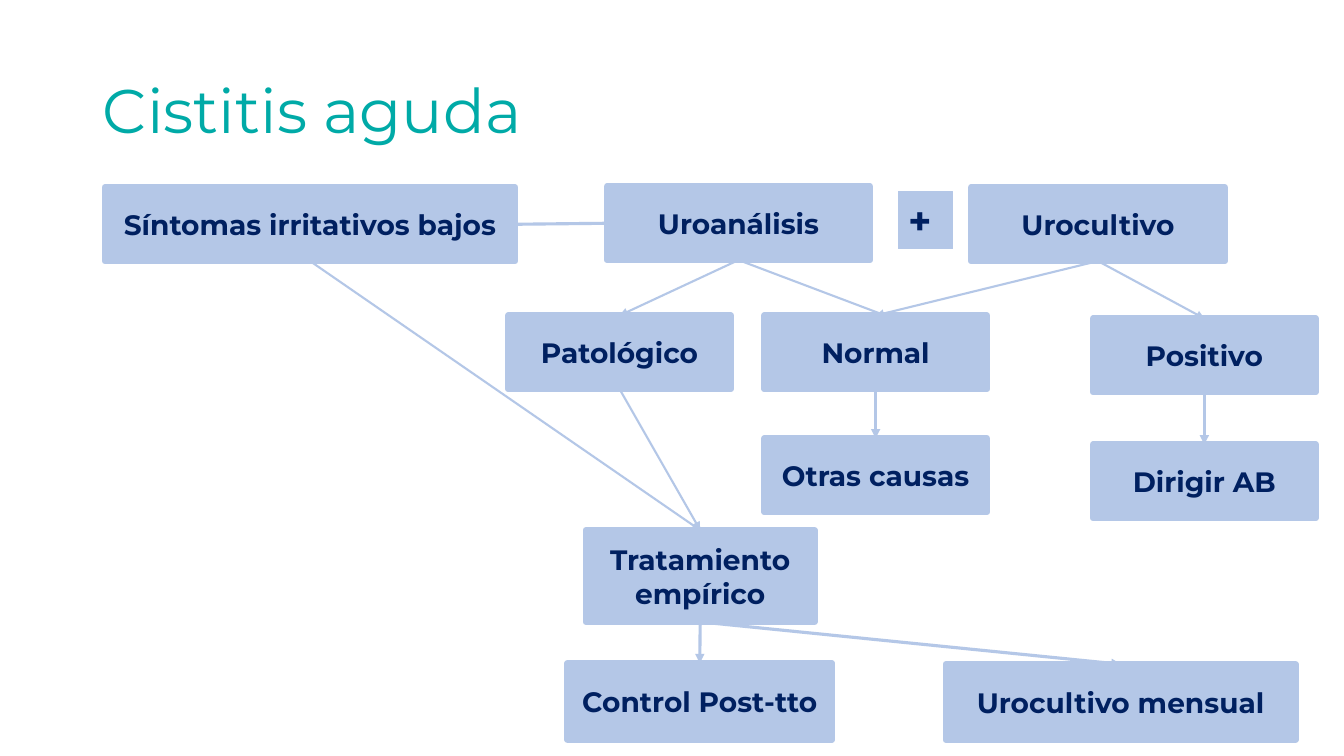
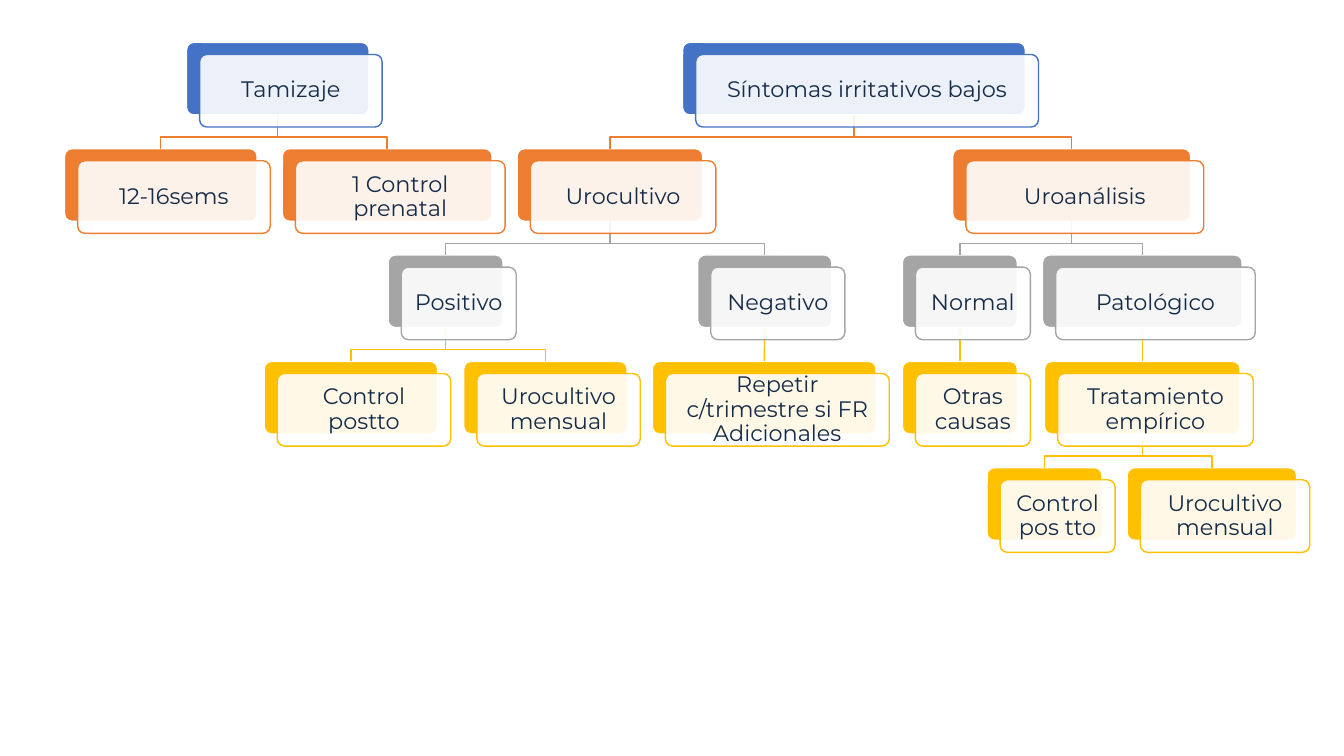
from lxml import etree
from pptx import Presentation
from pptx.dml.color import RGBColor
from pptx.enum.shapes import MSO_CONNECTOR, MSO_SHAPE
from pptx.enum.text import MSO_ANCHOR, MSO_AUTO_SIZE, PP_ALIGN
from pptx.oxml.ns import qn
from pptx.util import Inches, Pt

FONT = "Montserrat"
TEAL, NAVY, INK, WHITE = "00AAA7", "002060", "152B48", "FFFFFF"
PALE_BLUE = "B4C7E7"
LEVEL_COLORS = ["4472C4", "ED7D31", "A5A5A5", "FFC000", "FFC000"]
TOP, LEFT, BOTTOM, RIGHT = range(4)

# Flowchart: name, left, top, width, height
BOXES = [
    ("Síntomas irritativos bajos", 0, 0.01, 4.07, 0.73),
    ("Uroanálisis", 4.98, 0, 2.61, 0.73),
    ("Urocultivo", 8.59, 0.01, 2.52, 0.73),
    ("Patológico", 4, 1.28, 2.21, 0.73),
    ("Normal", 6.54, 1.28, 2.21, 0.73),
    ("Positivo", 9.8, 1.31, 2.21, 0.73),
    ("Otras causas", 6.54, 2.5, 2.21, 0.73),
    ("Dirigir AB", 9.8, 2.56, 2.21, 0.73),
    ("Tratamiento empírico", 4.77, 3.41, 2.27, 0.91),
    ("Control Post-tto", 4.59, 4.73, 2.62, 0.76),
    ("Urocultivo mensual", 8.34, 4.74, 3.47, 0.75),
]
# Arrows run from the bottom of one box to the top of another
ARROWS = [
    ("Uroanálisis", "Patológico", 1.5),
    ("Urocultivo", "Normal", 1.5),
    ("Urocultivo", "Positivo", 1.5),
    ("Síntomas irritativos bajos", "Tratamiento empírico", 1.5),
    ("Patológico", "Tratamiento empírico", 1.5),
    ("Normal", "Otras causas", 2.25),
    ("Positivo", "Dirigir AB", 2.25),
    ("Tratamiento empírico", "Control Post-tto", 2.25),
    ("Tratamiento empírico", "Urocultivo mensual", 2.25),
]

# Trees: text, left, width, children
TREES = [
    ("Tamizaje", 1.21, 1.81, [
        ("12-16sems", 0, 1.91, []),
        ("1 Control prenatal", 2.16, 2.08, []),
    ]),
    ("Síntomas irritativos bajos", 6.13, 3.4, [
        ("Urocultivo", 4.49, 1.84, [
            ("Positivo", 3.21, 1.14, [
                ("Control postto", 1.98, 1.72, []),
                ("Urocultivo mensual", 3.96, 1.62, []),
            ]),
            ("Negativo", 6.28, 1.33, [
                ("Repetir c/trimestre si FR Adicionales", 5.83, 2.22, []),
            ]),
        ]),
        ("Uroanálisis", 8.81, 2.36, [
            ("Normal", 8.31, 1.14, [("Otras causas", 8.31, 1.14, [])]),
            ("Patológico", 9.7, 1.98, [
                ("Tratamiento empírico", 9.72, 1.94, [
                    ("Control pos tto", 9.15, 1.14, []),
                    ("Urocultivo mensual", 10.54, 1.68, []),
                ]),
            ]),
        ]),
    ]),
]
CARD_HEIGHT, LEVEL_STEP, CARD_SHIFT = 0.72, 1.055, (0.13, 0.12)


def color(value):
    return RGBColor.from_string(value)


def write(shape, text, size, text_color, bold=False, align=PP_ALIGN.CENTER,
          anchor=MSO_ANCHOR.MIDDLE, spacing=None):
    frame = shape.text_frame
    frame.text = text
    frame.word_wrap = True
    frame.auto_size = MSO_AUTO_SIZE.NONE
    frame.vertical_anchor = anchor
    paragraph = frame.paragraphs[0]
    paragraph.alignment = align
    if spacing:
        paragraph.line_spacing = spacing
    font = paragraph.runs[0].font
    font.name, font.size, font.bold = FONT, Pt(size), bold
    font.color.rgb = color(text_color)


def add_panel(slide, kind, box, fill, line, line_width):
    shape = slide.shapes.add_shape(kind, *(Inches(value) for value in box))
    shape.shadow.inherit = False
    shape.fill.solid()
    shape.fill.fore_color.rgb = color(fill)
    shape.line.color.rgb = color(line)
    shape.line.width = Pt(line_width)
    return shape


def add_line(slide, start, end, line_color, width, arrow=False):
    """Join two (shape, site) ends; an end may also be a pair of lengths."""
    free_end = end if not hasattr(end[0], "shape_id") else (0, 0)
    line = slide.shapes.add_connector(MSO_CONNECTOR.STRAIGHT, 0, 0, *free_end)
    line.begin_connect(*start)
    if end is not free_end:
        line.end_connect(*end)
    line.line.color.rgb = color(line_color)
    line.line.width = Pt(width)
    if arrow:
        tail = etree.SubElement(line.line._get_or_add_ln(), qn("a:tailEnd"))
        tail.set("type", "triangle")
    etree.SubElement(line._element.spPr, qn("a:effectLst"))


def add_title(slide, text, left, top, width, height):
    title = slide.shapes.title
    title.left, title.top = Inches(left), Inches(top)
    title.width, title.height = Inches(width), Inches(height)
    write(title, text, 44, TEAL, align=PP_ALIGN.LEFT, spacing=0.9)


def add_flowchart(slide, left, top):
    # Boxes
    shapes = {}
    for name, x, y, width, height in BOXES:
        shapes[name] = add_panel(slide, MSO_SHAPE.RECTANGLE,
                                 (left + x, top + y, width, height),
                                 PALE_BLUE, PALE_BLUE, 4.5)
        write(shapes[name], name, 20, NAVY, bold=True)
    plus = add_panel(slide, MSO_SHAPE.RECTANGLE,
                     (left + 7.87, top + 0.05, 0.54, 0.57),
                     PALE_BLUE, PALE_BLUE, 0.75)
    write(plus, "+", 28, NAVY, bold=True, align=PP_ALIGN.LEFT,
          anchor=MSO_ANCHOR.TOP)

    # Links
    add_line(slide, (shapes["Síntomas irritativos bajos"], RIGHT),
             (shapes["Uroanálisis"], LEFT), PALE_BLUE, 2.25)
    for source, target, width in ARROWS:
        add_line(slide, (shapes[source], BOTTOM), (shapes[target], TOP),
                 PALE_BLUE, width, arrow=True)
    # This arrow ends just right of the middle of "Normal"
    add_line(slide, (shapes["Uroanálisis"], BOTTOM),
             (Inches(left + 7.82), Inches(top + 1.31)),
             PALE_BLUE, 1.5, arrow=True)


def add_branch(slide, parent, child, line_color):
    """Link two cards: straight when aligned, otherwise with two bends."""
    start_x = parent.left + parent.width // 2
    end_x = child.left + child.width // 2
    if abs(start_x - end_x) < Inches(0.02):
        add_line(slide, (parent, BOTTOM), (child, TOP), line_color, 1)
        return
    start_y = parent.top + parent.height
    bend_y = start_y + Inches(0.22)
    builder = slide.shapes.build_freeform(start_x, start_y)
    builder.add_line_segments(
        [(start_x, bend_y), (end_x, bend_y), (end_x, child.top)], close=False)
    branch = builder.convert_to_shape()
    branch.shadow.inherit = False
    branch.fill.background()
    branch.line.color.rgb = color(line_color)
    branch.line.width = Pt(1)


def add_card(slide, box, fill, line):
    card = add_panel(slide, MSO_SHAPE.ROUNDED_RECTANGLE, box, fill, line, 1)
    card.adjustments[0] = 0.1
    return card


def add_tree(slide, node, left, top, level=0):
    """Draw a node with its descendants and return its back card."""
    text, x, width, children = node
    card_left, card_top = left + x, top + level * LEVEL_STEP
    accent = LEVEL_COLORS[level]
    back = add_card(slide, (card_left, card_top, width, CARD_HEIGHT),
                    accent, WHITE)

    # Branches lie under the translucent front card
    for child in children:
        child_card = add_tree(slide, child, left, top, level + 1)
        add_branch(slide, back, child_card, LEVEL_COLORS[level + 1])

    shift_x, shift_y = CARD_SHIFT
    front = add_card(slide, (card_left + shift_x, card_top + shift_y,
                             width, CARD_HEIGHT), WHITE, accent)
    fill_color = front._element.spPr.find(qn("a:solidFill"))[0]
    etree.SubElement(fill_color, qn("a:alpha")).set("val", "90000")
    frame = front.text_frame
    frame.margin_left = frame.margin_right = Inches(0.07)
    frame.margin_top = frame.margin_bottom = Inches(0.07)
    write(front, text, 16, INK, spacing=0.9)
    return back


def main():
    presentation = Presentation()
    presentation.slide_width = Inches(13.33)
    presentation.slide_height = Inches(7.5)
    title_only, blank = presentation.slide_layouts[5], presentation.slide_layouts[6]

    slide = presentation.slides.add_slide(title_only)
    add_title(slide, "Cistitis aguda", 0.92, 0.4, 11.5, 1.45)
    add_flowchart(slide, 1.04, 1.85)

    slide = presentation.slides.add_slide(blank)
    for tree in TREES:
        add_tree(slide, tree, 0.64, 0.42)

    presentation.save("out.pptx")


if __name__ == "__main__":
    main()
